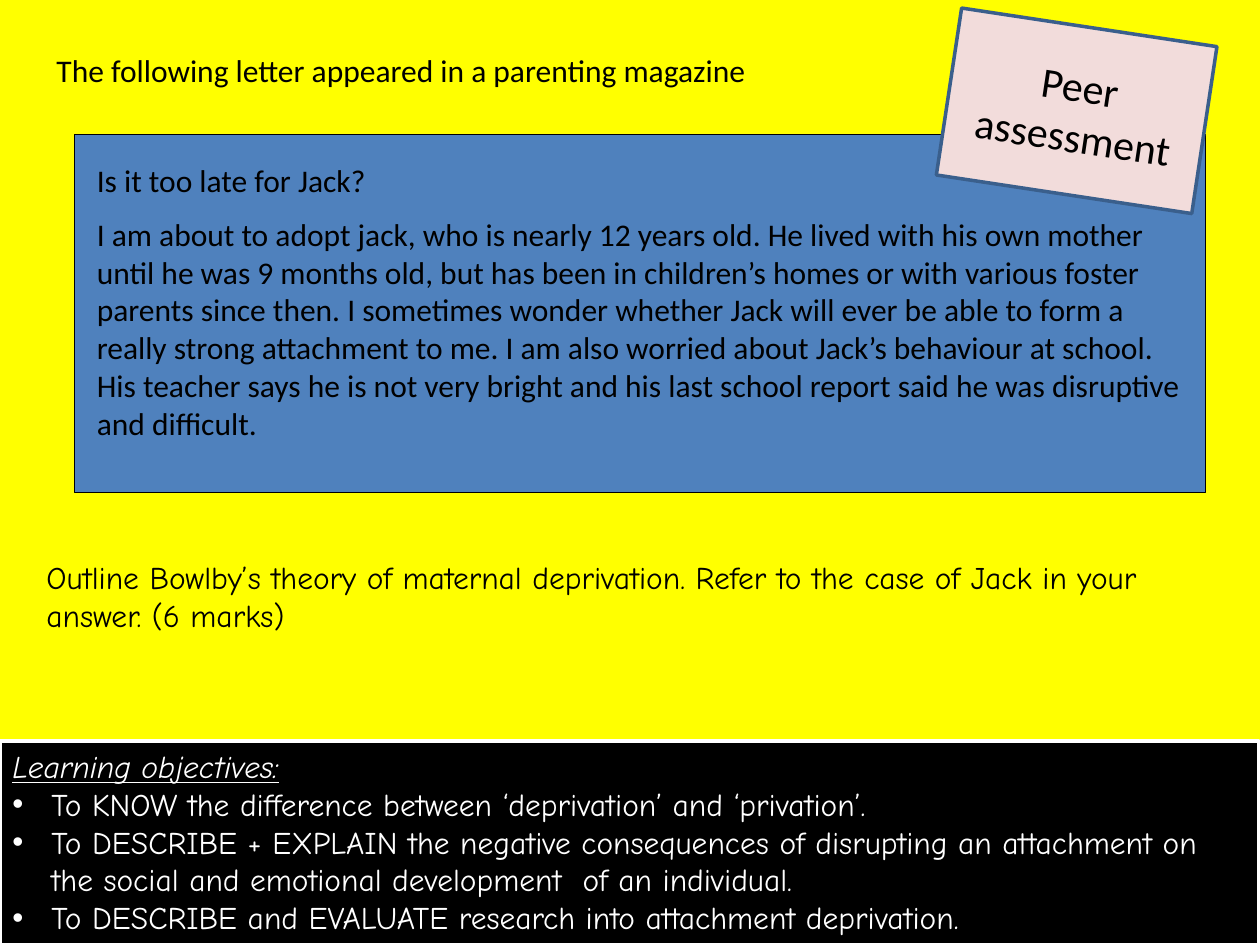
from lxml import etree
from pptx import Presentation
from pptx.dml.color import RGBColor
from pptx.enum.shapes import MSO_SHAPE
from pptx.enum.text import MSO_ANCHOR, PP_ALIGN
from pptx.oxml.ns import qn
from pptx.util import Inches, Pt

YELLOW = RGBColor(0xFF, 0xFF, 0x00)
BLUE = RGBColor(0x4F, 0x81, 0xBD)
DARK_BLUE = RGBColor(0x3A, 0x5F, 0x8C)
PINK = RGBColor(0xF2, 0xDC, 0xDB)
BLACK = RGBColor(0x00, 0x00, 0x00)
WHITE = RGBColor(0xFF, 0xFF, 0xFF)

BODY = {"name": "Calibri", "size": Pt(18)}
HAND = {"name": "Comic Neue", "size": Pt(18)}
STICKER = {"name": "Calibri", "size": Pt(24)}
HEADING = {**HAND, "italic": True, "underline": True}

INTRO = "The following letter appeared in a parenting magazine"
LETTER = [
    "Is it too late for Jack?",
    "I am about to adopt jack, who is nearly 12 years old. He lived with his own "
    "mother until he was 9 months old, but has been in children’s homes or with "
    "various foster parents since then. I sometimes wonder whether Jack will ever be "
    "able to form a  really strong attachment to me. I am also worried about Jack’s "
    "behaviour at school. His teacher says he is not very bright and his last school "
    "report said he was disruptive and difficult.",
]
QUESTION = ("Outline Bowlby’s theory of maternal deprivation. Refer to the case of "
            "Jack in your answer. (6 marks)")
OBJECTIVES = [
    "To KNOW the difference between ‘deprivation’ and ‘privation’.",
    "To DESCRIBE + EXPLAIN the negative consequences of disrupting an attachment on "
    "the social and emotional development  of an individual.",
    "To DESCRIBE and EVALUATE research into attachment deprivation.",
]


def add_panel(slide, box, fill, line, line_width):
    shape = slide.shapes.add_shape(MSO_SHAPE.RECTANGLE, *map(Inches, box))
    shape.shadow.inherit = False
    shape.fill.solid()
    shape.fill.fore_color.rgb = fill
    shape.line.color.rgb = line
    shape.line.width = Pt(line_width)
    return shape


def write_paragraphs(frame, texts, font_values, color=BLACK,
                     align=PP_ALIGN.LEFT, gap=0):
    """Fill the frame, with the gap in points between paragraphs."""
    frame.word_wrap = True
    for index, text in enumerate(texts):
        paragraph = frame.add_paragraph() if index else frame.paragraphs[0]
        paragraph.alignment = align
        if index and gap:
            paragraph.space_before = Pt(gap)
        run = paragraph.add_run()
        run.text = text
        run.font.color.rgb = color
        for name, value in font_values.items():
            setattr(run.font, name, value)


def add_bullet(paragraph, indent):
    properties = paragraph._p.get_or_add_pPr()
    properties.set("marL", str(indent))
    properties.set("indent", str(-indent))
    etree.SubElement(properties, qn("a:buFont")).set("typeface", "Arial")
    etree.SubElement(properties, qn("a:buChar")).set("char", "•")


def add_text(slide, box, texts, font_values):
    text_box = slide.shapes.add_textbox(*map(Inches, box))
    write_paragraphs(text_box.text_frame, texts, font_values, gap=9)


def add_letter(slide, box):
    left, top, width, height = box
    add_panel(slide, box, BLUE, BLACK, 0.75)
    add_text(slide, (left + 0.08, top + 0.16, width - 0.16, height - 0.49),
             LETTER, BODY)


def add_objectives(slide, box):
    frame = add_panel(slide, box, BLACK, WHITE, 2).text_frame
    frame.vertical_anchor = MSO_ANCHOR.TOP
    write_paragraphs(frame, ["Learning objectives:", *OBJECTIVES], HAND, WHITE)
    heading, *objectives = frame.paragraphs
    for name, value in HEADING.items():
        setattr(heading.runs[0].font, name, value)
    for paragraph in objectives:
        add_bullet(paragraph, Inches(0.31))


def add_sticker(slide, box):
    shape = add_panel(slide, box, PINK, DARK_BLUE, 2)
    shape.rotation = 8.6
    shape.text_frame.vertical_anchor = MSO_ANCHOR.MIDDLE
    write_paragraphs(shape.text_frame, ["Peer assessment"], STICKER,
                     align=PP_ALIGN.CENTER)


def main():
    presentation = Presentation()
    presentation.slide_width = Inches(10)
    presentation.slide_height = Inches(7.5)
    slide = presentation.slides.add_slide(presentation.slide_layouts[6])
    slide.background.fill.solid()
    slide.background.fill.fore_color.rgb = YELLOW

    add_text(slide, (0.35, 0.36, 9.37, 0.4), [INTRO], BODY)
    add_letter(slide, (0.59, 1.07, 8.98, 2.84))
    add_text(slide, (0.27, 4.38, 9.29, 0.7), [QUESTION], HAND)
    add_objectives(slide, (0, 5.88, 9.99, 1.62))
    add_sticker(slide, (7.52, 0.21, 2.05, 1.34))
    presentation.save("out.pptx")


if __name__ == "__main__":
    main()
